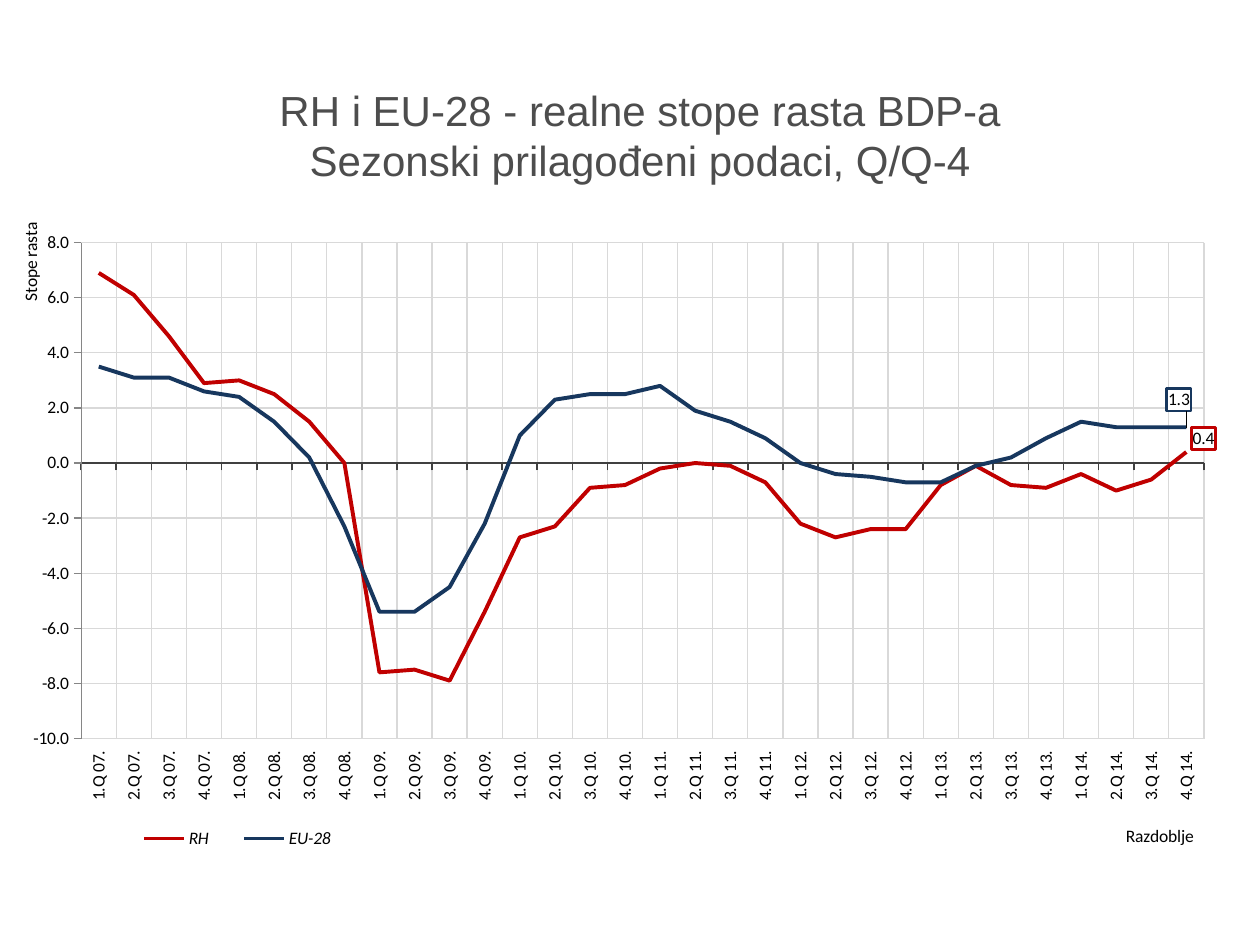
from copy import deepcopy

from pptx import Presentation
from pptx.chart.data import CategoryChartData
from pptx.dml.color import RGBColor
from pptx.enum.chart import XL_CHART_TYPE as ChartType
from pptx.enum.chart import XL_LEGEND_POSITION as LegendPosition
from pptx.enum.chart import XL_MARKER_STYLE as MarkerStyle
from pptx.enum.chart import XL_TICK_LABEL_POSITION as LabelPosition
from pptx.enum.chart import XL_TICK_MARK as TickMark
from pptx.enum.text import MSO_ANCHOR, MSO_AUTO_SIZE, PP_ALIGN
from pptx.oxml import parse_xml
from pptx.oxml.ns import nsdecls, qn
from pptx.util import Inches, Pt

WHITE = RGBColor(0xFF, 0xFF, 0xFF)
BLACK = RGBColor(0, 0, 0)
TITLE_GREY = RGBColor(0x4D, 0x4D, 0x4D)
AXIS_GREY = RGBColor(0x40, 0x40, 0x40)
SCALE_GREY = RGBColor(0x86, 0x86, 0x86)
GRID_GREY = RGBColor(0xD9, 0xD9, 0xD9)
CROATIA_RED = RGBColor(0xC0, 0, 0)
EU_BLUE = RGBColor(0x17, 0x37, 0x5E)

TITLE_LINES = ["RH i EU-28 - realne stope rasta BDP-a",
               "Sezonski prilagođeni podaci, Q/Q-4"]
QUARTERS = [f"{quarter}.Q {year:02d}." for year in range(7, 15) for quarter in range(1, 5)]
CROATIA_GROWTH = [
    6.9, 6.1, 4.6, 2.9, 3.0, 2.5, 1.5, 0.0, -7.6, -7.5, -7.9, -5.4, -2.7, -2.3, -0.9, -0.8,
    -0.2, 0.0, -0.1, -0.7, -2.2, -2.7, -2.4, -2.4, -0.8, -0.1, -0.8, -0.9, -0.4, -1.0, -0.6, 0.4]
EU_GROWTH = [
    3.5, 3.1, 3.1, 2.6, 2.4, 1.5, 0.2, -2.3, -5.4, -5.4, -4.5, -2.2, 1.0, 2.3, 2.5, 2.5,
    2.8, 1.9, 1.5, 0.9, 0.0, -0.4, -0.5, -0.7, -0.7, -0.1, 0.2, 0.9, 1.5, 1.3, 1.3, 1.3]
UPRIGHT = "-5400000"


def add_heading(slide):
    """Fill the title placeholder with the two heading lines."""
    heading = slide.shapes.title
    heading.left, heading.top = Inches(0.83), Inches(0.6)
    heading.width, heading.height = Inches(8.5), Inches(0.94)
    frame = heading.text_frame
    frame.auto_size = MSO_AUTO_SIZE.NONE
    frame.vertical_anchor = MSO_ANCHOR.MIDDLE
    paragraph = frame.paragraphs[0]
    paragraph.alignment = PP_ALIGN.CENTER
    for index, line in enumerate(TITLE_LINES):
        if index:
            paragraph.add_line_break()
        run = paragraph.add_run()
        run.text = line
        run.font.name, run.font.size = "Arial", Pt(24)
        run.font.color.rgb = TITLE_GREY
    line_break = paragraph._p.find(qn("a:br"))
    line_break.insert(0, deepcopy(run._r.rPr))
    line_break[0].find(qn("a:latin")).set("typeface", "Calibri")


def set_layout(element, x, y, w=None, h=None, after=None, inner=False):
    """Give a chart part a manual layout in fractions of the chart."""
    for old in element.findall(qn("c:layout")):
        element.remove(old)
    target = '<c:layoutTarget val="inner"/>' if inner else ""
    modes = '<c:xMode val="edge"/><c:yMode val="edge"/>'
    size = f'<c:w val="{w}"/><c:h val="{h}"/>' if w else ""
    layout = parse_xml(
        f'<c:layout {nsdecls("c")}><c:manualLayout>{target}{modes}'
        f'<c:x val="{x}"/><c:y val="{y}"/>{size}</c:manualLayout></c:layout>')
    if after:
        element.find(qn(after)).addnext(layout)
    else:
        element.insert(0, layout)


def style_font(font, italic=False):
    """Apply the common chart lettering."""
    font.name, font.size = "Calibri", Pt(10)
    font.bold, font.italic = False, italic
    font.color.rgb = BLACK


def style_axis(axis, caption, x, y, color, width, rotation="0"):
    """Style an axis with its grid, ticks and placed caption."""
    axis.major_tick_mark, axis.minor_tick_mark = TickMark.OUTSIDE, TickMark.NONE
    axis.format.line.color.rgb = color
    axis.format.line.width = Pt(width)
    axis.has_major_gridlines = True
    grid = axis.major_gridlines.format.line
    grid.color.rgb, grid.width = GRID_GREY, Pt(0.75)
    style_font(axis.tick_labels.font)
    frame = axis.axis_title.text_frame
    frame._txBody.bodyPr.set("rot", rotation)
    frame._txBody.bodyPr.set("vert", "horz")
    run = frame.paragraphs[0].add_run()
    run.text = caption
    style_font(run.font)
    set_layout(axis.axis_title._element, x, y, after="c:tx")


def add_end_label(series, color, dx, dy):
    """Show the last value in a framed label moved off its point."""
    flags = "".join(f'<c:show{part} val="0"/>' for part in
                    ("LegendKey", "Val", "CatName", "SerName", "Percent", "BubbleSize"))
    shown = flags.replace('showVal val="0"', 'showVal val="1"')
    labels = parse_xml(
        f'<c:dLbls {nsdecls("c", "a")}><c:dLbl><c:idx val="{len(QUARTERS) - 1}"/>'
        f'<c:layout><c:manualLayout><c:x val="{dx}"/><c:y val="{dy}"/></c:manualLayout></c:layout>'
        '<c:numFmt formatCode="0.0" sourceLinked="0"/>'
        f'<c:spPr><a:solidFill><a:srgbClr val="{WHITE}"/></a:solidFill><a:ln w="{Pt(1.5)}">'
        f'<a:solidFill><a:srgbClr val="{color}"/></a:solidFill></a:ln></c:spPr>'
        f'<c:dLblPos val="r"/>{shown}</c:dLbl>{flags}</c:dLbls>')
    series._element.find(qn("c:cat")).addprevious(labels)


def style_series(series, color, dx, dy):
    """Draw a plain coloured line with a label at its end."""
    series.smooth = False
    series.marker.style = MarkerStyle.NONE
    series.format.line.color.rgb = color
    series.format.line.width = Pt(2.25)
    add_end_label(series, color, dx, dy)


def add_growth_chart(slide):
    """Add the line chart of quarterly growth rates."""
    data = CategoryChartData(number_format="0.0")
    data.categories = QUARTERS
    data.add_series("RH", CROATIA_GROWTH)
    data.add_series("EU-28", EU_GROWTH)
    chart = slide.shapes.add_chart(ChartType.LINE, Inches(0.03), Inches(1.47),
                                   Inches(9.76), Inches(5.43), data).chart
    chart.has_title = False
    style_font(chart.font)
    chart.plots[0].vary_by_categories = False
    set_layout(chart._chartSpace.chart.plotArea, 0.063, 0.084, 0.913, 0.725, inner=True)

    periods, rates = chart.category_axis, chart.value_axis
    style_axis(periods, "Razdoblje", 0.91, 0.93, AXIS_GREY, 1)
    periods.tick_label_position = LabelPosition.LOW
    periods.tick_labels.font._element.getparent().getparent().getparent().find(
        qn("a:bodyPr")).set("rot", UPRIGHT)
    style_axis(rates, "Stope rasta", 0.01, 0.05, SCALE_GREY, 0.75, UPRIGHT)
    rates.minimum_scale, rates.maximum_scale, rates.major_unit = -10, 8, 2
    rates.tick_labels.number_format = "0.0"
    rates.tick_labels.number_format_is_linked = False

    croatia, union = chart.plots[0].series
    style_series(croatia, CROATIA_RED, 0, -0.02)
    style_series(union, EU_BLUE, -0.02, -0.04)

    chart.has_legend = True
    chart.legend.position = LegendPosition.RIGHT
    chart.legend.include_in_layout = False
    style_font(chart.legend.font, italic=True)
    set_layout(chart.legend._element, 0.09, 0.93, 0.2, 0.05, after="c:legendPos")


def main():
    """Build and save the slide."""
    deck = Presentation()
    deck.slide_width, deck.slide_height = Inches(10), Inches(7.5)
    slide = deck.slides.add_slide(deck.slide_layouts[5])
    add_heading(slide)
    add_growth_chart(slide)
    deck.save("out.pptx")


if __name__ == "__main__":
    main()
